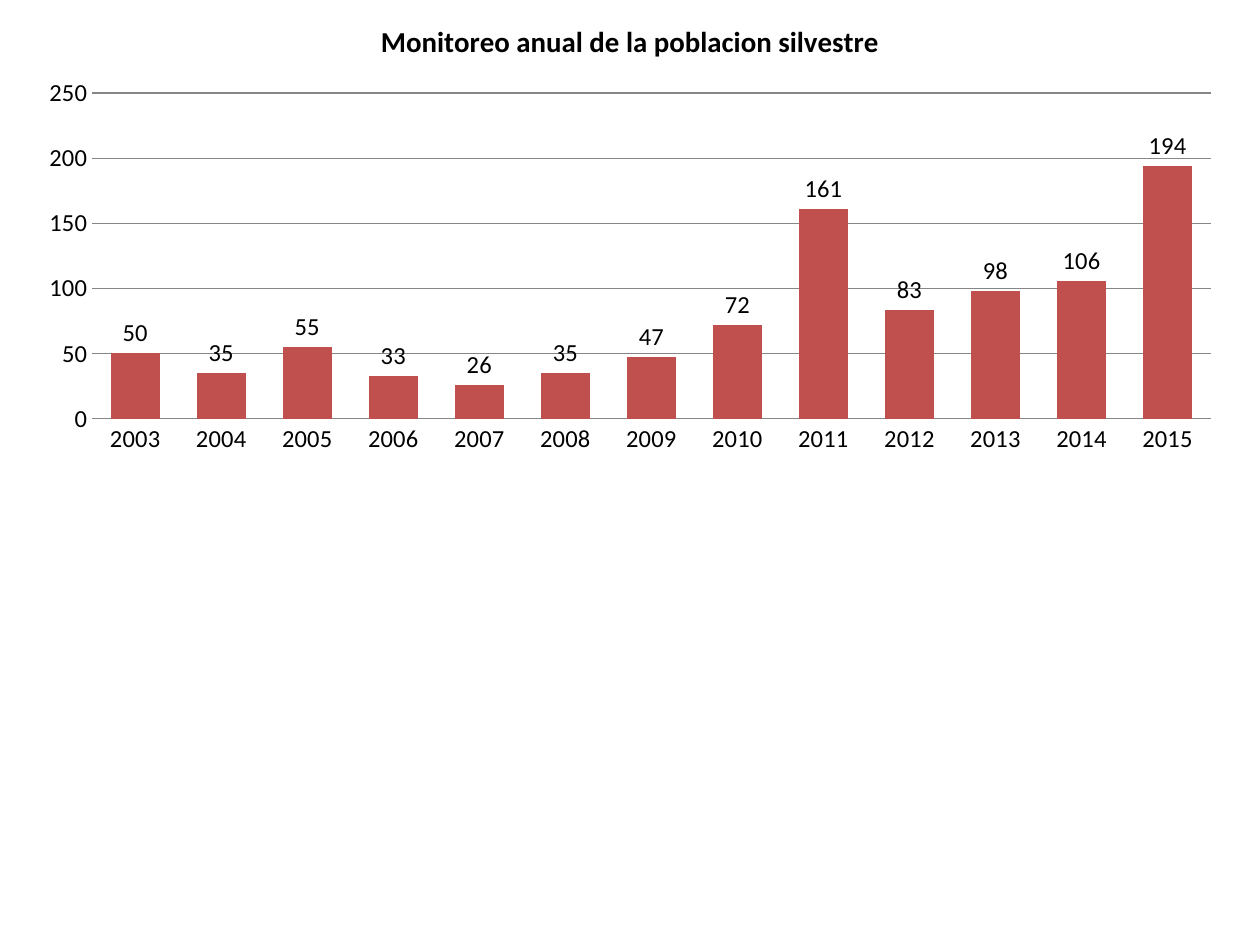
from dataclasses import dataclass

from pptx import Presentation
from pptx.chart.data import CategoryChartData
from pptx.dml.color import RGBColor
from pptx.enum.chart import XL_CHART_TYPE, XL_LABEL_POSITION, XL_TICK_MARK
from pptx.util import Inches, Pt


@dataclass(frozen=True)
class Theme:
    font: str = "Calibri"
    ink: RGBColor = RGBColor(0, 0, 0)
    bar: RGBColor = RGBColor(0xC0, 0x50, 0x4D)
    grid: RGBColor = RGBColor(0x86, 0x86, 0x86)
    body: Pt = Pt(14)
    head: Pt = Pt(16.5)
    line: Pt = Pt(0.75)


THEME = Theme()
TITLE = "Monitoreo anual de la poblacion silvestre"
START = 2003
COUNTS = (50, 35, 55, 33, 26, 35, 47, 72, 161, 83, 98, 106, 194)


def set_font(font, size, bold=False):
    font.name = THEME.font
    font.size = size
    font.bold = bold
    font.color.rgb = THEME.ink


def set_line(line):
    line.color.rgb = THEME.grid
    line.width = THEME.line


def add_title(chart):
    chart.has_title = True
    para = chart.chart_title.text_frame.paragraphs[0]
    run = para.add_run()
    run.text = TITLE
    set_font(run.font, THEME.head, bold=True)
    chart.chart_title.include_in_layout = False


def style_axes(chart):
    for axis in (chart.category_axis, chart.value_axis):
        axis.major_tick_mark = XL_TICK_MARK.NONE
        axis.minor_tick_mark = XL_TICK_MARK.NONE
        set_font(axis.tick_labels.font, THEME.body)
    years, scale = chart.category_axis, chart.value_axis
    years.has_major_gridlines = False
    set_line(years.format.line)
    scale.format.line.fill.background()
    scale.has_major_gridlines = True
    set_line(scale.major_gridlines.format.line)
    scale.minimum_scale, scale.maximum_scale = 0, 250
    scale.major_unit = 50


def style_bars(chart):
    plot = chart.plots[0]
    plot.gap_width, plot.overlap = 75, -25
    plot.vary_by_categories = False
    bars = plot.series[0]
    bars.invert_if_negative = False
    bars.format.fill.solid()
    bars.format.fill.fore_color.rgb = THEME.bar
    labels = bars.data_labels
    labels.show_value = True
    labels.position = XL_LABEL_POSITION.OUTSIDE_END
    set_font(labels.font, THEME.body)


def add_census(slide, box):
    """Yearly count of the wild population as a column chart."""
    data = CategoryChartData()
    data.categories = [str(START + step) for step in range(len(COUNTS))]
    data.add_series("Series 1", COUNTS)
    chart = slide.shapes.add_chart(
        XL_CHART_TYPE.COLUMN_CLUSTERED, *box, data).chart
    set_font(chart.font, THEME.body)
    chart.has_legend = False
    add_title(chart)
    style_axes(chart)
    style_bars(chart)


def main():
    deck = Presentation()
    deck.slide_width, deck.slide_height = Inches(10), Inches(7.5)
    slide = deck.slides.add_slide(deck.slide_layouts[6])

    # Chart across the upper half, with equal side margins
    wide, high = deck.slide_width, deck.slide_height
    edge = int(wide * 0.02)
    add_census(slide, (edge, 0, wide - 2 * edge, int(high * 0.49)))
    deck.save("out.pptx")


if __name__ == "__main__":
    main()
